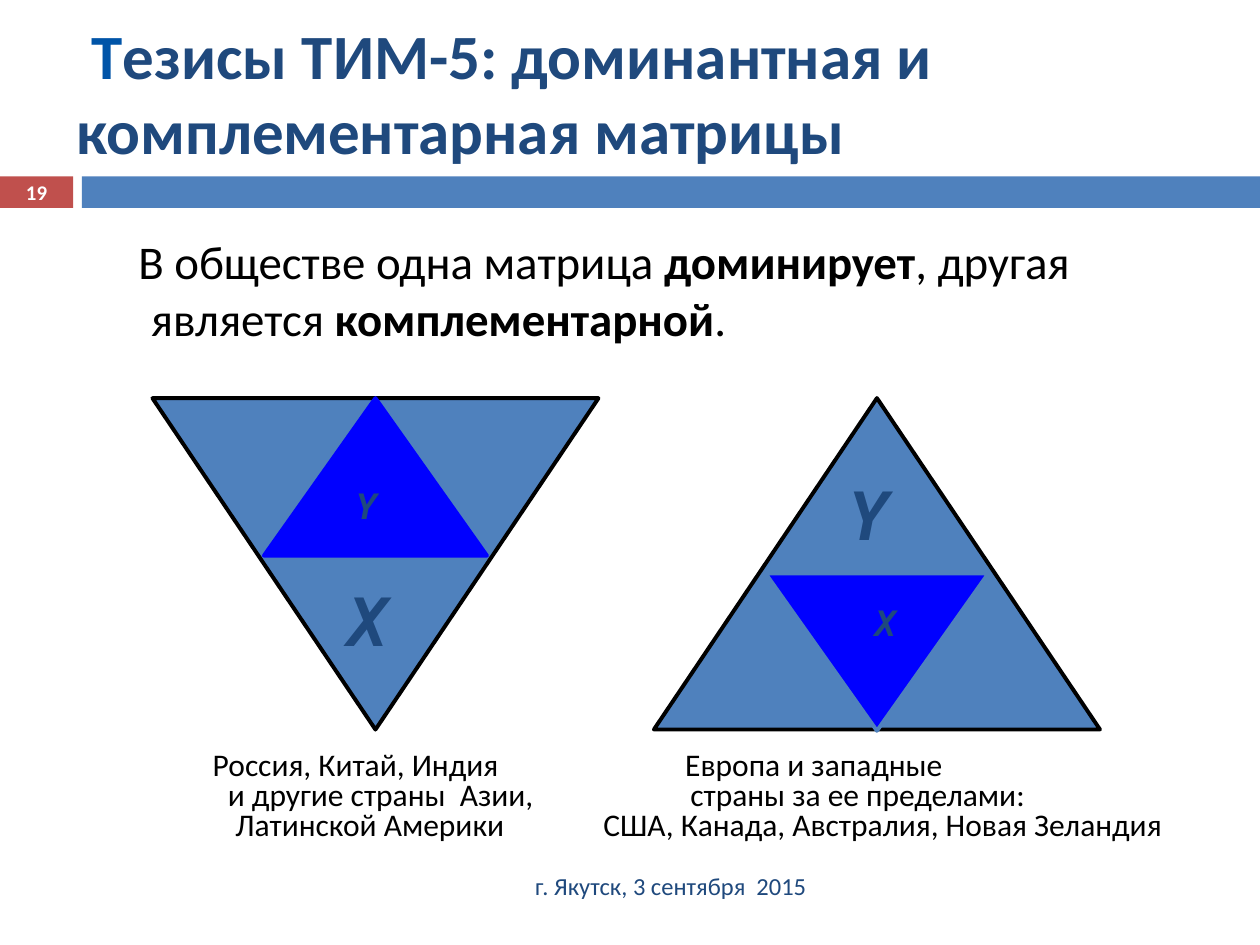
from pptx import Presentation
from pptx.dml.color import RGBColor
from pptx.enum.shapes import MSO_SHAPE as Shape
from pptx.enum.text import MSO_ANCHOR as Anchor, PP_ALIGN as Align
from pptx.util import Inches, Pt

NAVY = RGBColor(0x1F, 0x49, 0x7D)
ROYAL = RGBColor(0x00, 0x54, 0xA8)
STEEL = RGBColor(0x4F, 0x81, 0xBD)
BLUE = RGBColor(0x00, 0x00, 0xFF)
RED = RGBColor(0xC0, 0x50, 0x4D)
BLACK = RGBColor(0x00, 0x00, 0x00)
WHITE = RGBColor(0xFF, 0xFF, 0xFF)
SANS = "Calibri"
MONO = "DejaVu Sans Mono"


class MatrixSlide:
    """Draws the slide's elements on a grid of 100 columns by 75 rows."""

    def __init__(self, presentation):
        self.column = presentation.slide_width / 100
        self.row = presentation.slide_height / 75
        self.slide = presentation.slides.add_slide(presentation.slide_layouts[6])

    def place(self, left, top, width, height):
        return (round(left * self.column), round(top * self.row),
                round(width * self.column), round(height * self.row))

    def shape(self, kind, box, fill, line=None, inverted=False):
        shape = self.slide.shapes.add_shape(kind, *self.place(*box))
        shape.shadow.inherit = False
        shape.fill.solid()
        shape.fill.fore_color.rgb = fill
        if line is None:
            shape.line.fill.background()
        else:
            shape.line.color.rgb = line
            shape.line.width = Pt(2.25)
        shape.rotation = 180 if inverted else 0
        return shape

    def fill_text(self, frame, lines, size, color, font=SANS, bold=None, italic=None,
                  align=Align.LEFT, anchor=Anchor.TOP, spacing=None):
        frame.word_wrap = True
        frame.vertical_anchor = anchor
        for number, (runs, margin, indent) in enumerate(lines):
            paragraph = frame.add_paragraph() if number else frame.paragraphs[0]
            paragraph.alignment = align
            paragraph.line_spacing = spacing
            properties = paragraph._p.get_or_add_pPr()
            properties.set("marL", str(Inches(margin)))
            properties.set("indent", str(Inches(indent)))
            paragraph.font.name = font
            paragraph.font.size = Pt(size)
            paragraph.font.color.rgb = color
            paragraph.font.bold = bold
            paragraph.font.italic = italic
            for words, emphasis in runs:
                run = paragraph.add_run()
                run.text = words
                if isinstance(emphasis, RGBColor):
                    run.font.color.rgb = emphasis
                elif emphasis:
                    run.font.bold = True

    def text(self, box, lines, size, color, **style):
        textbox = self.slide.shapes.add_textbox(*self.place(*box))
        self.fill_text(textbox.text_frame, lines, size, color, **style)

    def caption(self, box, lines):
        self.text(box, [([(words, None)], margin, 0) for words, margin in lines],
                  18, BLACK, spacing=0.8)

    def matrix(self, left, inverted, outer, inner, inner_line, inner_top, label_top, inner_center):
        width, height, label_width, label_height = 35.4, 26.3, 5.9, 6.9
        self.shape(Shape.ISOSCELES_TRIANGLE, (left, 31.6, width, height), STEEL, BLACK, inverted)
        self.shape(Shape.ISOSCELES_TRIANGLE, (left + width / 4, inner_top, width / 2, 12.5),
                   BLUE, inner_line, not inverted)
        label = self.shape(
            Shape.RECTANGLE,
            (left + (width - label_width) / 2, label_top, label_width, label_height), STEEL, STEEL)
        frame = label.text_frame
        frame.margin_left = frame.margin_right = Inches(0.08)
        frame.margin_top = frame.margin_bottom = Inches(0.05)
        letter = dict(color=NAVY, font=MONO, bold=True, italic=True)
        self.fill_text(frame, [([(outer, None)], 0, 0)], 38, **letter)
        x, y = inner_center
        self.text((x - 3, y - 2.5, 6, 5), [([(inner, None)], 0, 0)], 20,
                  align=Align.CENTER, anchor=Anchor.MIDDLE, **letter)


def main():
    presentation = Presentation()
    presentation.slide_width, presentation.slide_height = Inches(10), Inches(7.5)
    page = MatrixSlide(presentation)

    number = page.shape(Shape.RECTANGLE, (0, 14, 5.8, 2.5), RED)
    page.fill_text(number.text_frame, [([("19", None)], 0, 0)], 11.9, WHITE,
                   bold=True, align=Align.CENTER, anchor=Anchor.MIDDLE)
    page.shape(Shape.RECTANGLE, (6.5, 14, 93.5, 2.5), STEEL)

    title = [("Т", ROYAL), ("езисы ТИМ-5: доминантная и комплементарная матрицы", None)]
    page.text((5.1, 2.1, 91.7, 10.4), [(title, 0, 0.12)], 36, NAVY,
              bold=True, anchor=Anchor.MIDDLE)
    thesis = [("В обществе одна матрица ", False), ("доминирует", True),
              (", другая является ", False), ("комплементарной", True), (".", False)]
    page.text((7.5, 18, 86.6, 9.4), [(thesis, 0.35, -0.1)], 26.8, BLACK)

    page.matrix(12.1, True, "X", "Y", BLUE, 31.6, 45.5, (29.1, 40.1))
    page.matrix(51.9, False, "Y", "X", STEEL, 45.5, 37.1, (70.3, 49.4))

    page.caption((15.9, 59.2, 30, 8.3), [
        ("Россия, Китай, Индия", 0),
        ("и другие страны  Азии,", 0.12),
        ("Латинской Америки", 0.18)])
    page.caption((46.9, 59.2, 48, 8.3), [
        ("Европа и западные", 0.65),
        ("страны за ее пределами:", 0.69),
        ("США, Канада, Австралия, Новая Зеландия", 0)])
    page.text((6.7, 68.3, 58.3, 4), [([("г. Якутск, 3 сентября  2015", None)], 0, 0)],
              14, NAVY, align=Align.RIGHT, anchor=Anchor.MIDDLE)

    presentation.save("out.pptx")


if __name__ == "__main__":
    main()
